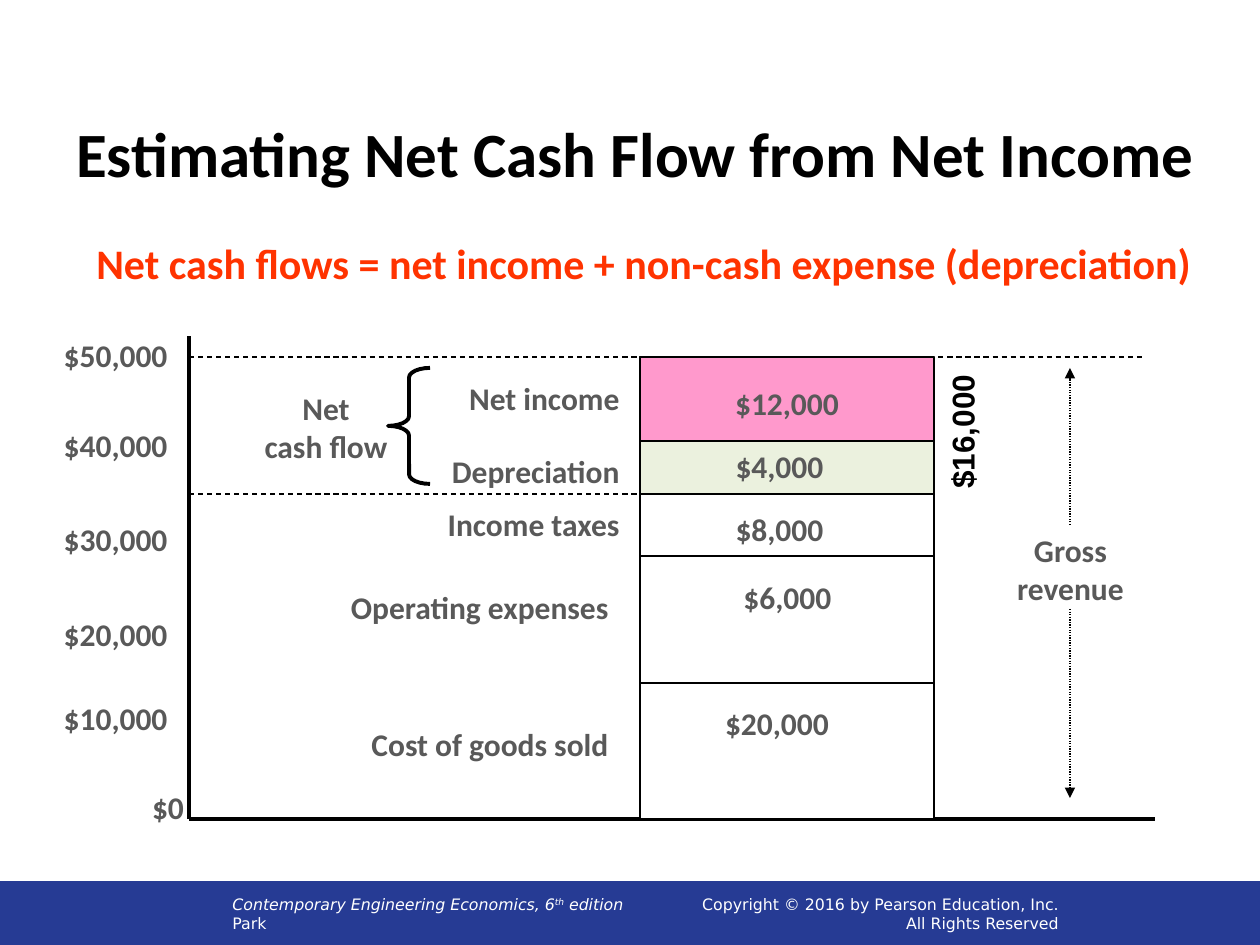
import pptx
import pptx.dml.color
import pptx.enum.dml
import pptx.enum.shapes
import pptx.enum.text
import pptx.oxml.ns
import pptx.util
from dataclasses import dataclass
from lxml import etree

PX = pptx.util.Inches(1) / 126
SHAPE = pptx.enum.shapes.MSO_SHAPE
DASH = pptx.enum.dml.MSO_LINE
ANCHOR = pptx.enum.text.MSO_ANCHOR
ALIGN = {
    "l": pptx.enum.text.PP_ALIGN.LEFT,
    "c": pptx.enum.text.PP_ALIGN.CENTER,
    "r": pptx.enum.text.PP_ALIGN.RIGHT,
}


@dataclass(frozen=True)
class Theme:
    ink: str = "000000"
    paper: str = "FFFFFF"
    label: str = "595959"
    formula: str = "FF3300"
    footer: str = "263B94"
    income: str = "FF99CC"
    depreciation: str = "EBF1DE"
    font: str = "Calibri"
    side_font: str = "Arial"
    footer_font: str = "DejaVu Sans"
    title_size: int = 36
    formula_size: int = 24
    label_size: int = 18
    footer_size: int = 9
    thin: float = 0.75
    thick: float = 2.25


THEME = Theme()


def emu(*lengths):
    return [round(length * PX) for length in lengths]


def rgb(color):
    return pptx.dml.color.RGBColor.from_string(color)


def add_text(slide, text, box, size=THEME.label_size, color=THEME.label, font=THEME.font,
             bold=True, italic=False, align="c", anchor=ANCHOR.TOP, wrap=False, rotation=0):
    label = slide.shapes.add_textbox(*emu(*box))
    label.rotation = rotation
    frame = label.text_frame
    frame.word_wrap = wrap
    frame.vertical_anchor = anchor
    for index, line in enumerate(text.split("\n")):
        paragraph = frame.paragraphs[0] if index == 0 else frame.add_paragraph()
        paragraph.alignment = ALIGN[align]
        for part, words in enumerate(line.split("^")):
            run = paragraph.add_run()
            run.text = words
            run.font.size = pptx.util.Pt(size)
            run.font.name = font
            run.font.bold = bold
            run.font.italic = italic and index == 0
            run.font.color.rgb = rgb(color)
            if part % 2:
                run.font._element.set("baseline", "30000")


def add_block(slide, box, preset=SHAPE.RECTANGLE, fill=None, line=THEME.ink, weight=THEME.thin):
    block = slide.shapes.add_shape(preset, *emu(*box))
    block.shadow.inherit = False
    if fill:
        block.fill.solid()
        block.fill.fore_color.rgb = rgb(fill)
    else:
        block.fill.background()
    block.line.color.rgb = rgb(line)
    block.line.width = pptx.util.Pt(weight)
    return block


def add_line(slide, start, end, weight=THEME.thin, dash=None, arrow=False):
    rule = slide.shapes.add_connector(
        pptx.enum.shapes.MSO_CONNECTOR.STRAIGHT, *emu(*start, *end))
    rule.line.color.rgb = rgb(THEME.ink)
    rule.line.width = pptx.util.Pt(weight)
    if dash:
        rule.line.dash_style = dash
    if arrow:
        etree.SubElement(rule.line._get_or_add_ln(), pptx.oxml.ns.qn("a:tailEnd"), type="triangle")
    etree.SubElement(rule._element.spPr, pptx.oxml.ns.qn("a:effectLst"))


def add_footer(slide, left, top, width, height):
    add_block(slide, (left, top, width, height), fill=THEME.footer, line=THEME.footer)
    style = dict(size=THEME.footer_size, color=THEME.paper, font=THEME.footer_font,
                 bold=False, anchor=ANCHOR.MIDDLE, wrap=True)
    add_text(slide, "Contemporary Engineering Economics, 6^th^ edition\nPark",
             (left + 220, top, 776, height), italic=True, align="l", **style)
    add_text(slide, "Copyright © 2016 by Pearson Education, Inc.\nAll Rights Reserved",
             (left + 620, top, 451, height), align="r", **style)


def add_heading(slide, left, top, width, height):
    add_text(slide, "Estimating Net Cash Flow from Net Income", (left, top, width, 110),
             size=THEME.title_size, color=THEME.ink, anchor=ANCHOR.MIDDLE, wrap=True)
    add_text(slide, "Net cash flows = net income + non-cash expense (depreciation)",
             (left + 21, top + height - 63, 1137, 63),
             size=THEME.formula_size, color=THEME.formula, align="l")


def add_axes(slide, left, top, width, height):
    bottom = top + height
    add_line(slide, (left, bottom), (left + width, bottom), THEME.thick)
    add_line(slide, (left, bottom), (left, top), THEME.thick)
    add_line(slide, (left, top + 21), (left + 955, top + 21), dash=DASH.DASH)
    add_line(slide, (left, top + 158), (left + 451, top + 158), dash=DASH.DASH)
    ticks = {"$50,000": -6, "$40,000": 84, "$30,000": 178, "$20,000": 273, "$10,000": 357}
    for amount, offset in ticks.items():
        add_text(slide, amount, (left - 139, top + offset, 130, 50), align="r")
    add_text(slide, "$0", (left - 50, bottom - 37, 58, 50))


def add_stack(slide, left, top, width, height):
    add_block(slide, (left, top, width, height), fill=THEME.paper)
    for divider in (84, 137, 199, 326):
        add_line(slide, (left, top + divider), (left + width, top + divider))
    add_block(slide, (left, top + 84, width, 53), fill=THEME.depreciation)
    add_block(slide, (left, top, width, 84), fill=THEME.income)
    amounts = [("$12,000", 82, 21, 130), ("$4,000", 83, 84, 113), ("$8,000", 83, 147, 113),
               ("$6,000", 91, 215, 113), ("$20,000", 72, 341, 130)]
    for amount, x, y, span in amounts:
        add_text(slide, amount, (left + x, top + y, span, 50))
    add_text(slide, "$16,000", (left + 252, top + 49, 140, 50), color=THEME.ink,
             font=THEME.side_font, align="l", rotation=270)


def add_items(slide, left, top, width, height):
    right = left + width
    items = [("Net income", 178, 0, 16), ("Depreciation", 194, 0, 89),
             ("Income taxes", 198, 0, 142), ("Operating expenses", 285, 11, 225),
             ("Cost of goods sold", 264, 11, 362)]
    for item, span, indent, y in items:
        add_text(slide, item, (right - indent - span, top + y, span, 50), align="r")
    brace = add_block(slide, (left + 137, top + 11, 42, 116), SHAPE.LEFT_BRACE,
                      weight=THEME.thick)
    brace.adjustments[0] = 0.23
    add_text(slide, "Net\ncash flow", (left, top + 26, 150, 89))


def add_revenue(slide, left, top, width, height):
    middle = left + width // 2
    add_line(slide, (middle, top + 157), (middle, top), dash=DASH.ROUND_DOT, arrow=True)
    add_line(slide, (middle, top + 241), (middle, top + height), dash=DASH.ROUND_DOT, arrow=True)
    add_text(slide, "Gross\nrevenue", (left, top + 157, width, 89))


def main():
    deck = pptx.Presentation()
    deck.slide_width, deck.slide_height = emu(1260, 945)
    slide = deck.slides.add_slide(deck.slide_layouts[6])
    add_footer(slide, 0, 882, 1260, 63)
    add_heading(slide, 63, 97, 1144, 197)
    add_axes(slide, 189, 336, 966, 483)
    add_stack(slide, 640, 357, 294, 462)
    add_items(slide, 251, 357, 381, 462)
    add_revenue(slide, 1004, 368, 133, 430)
    deck.save("out.pptx")


if __name__ == "__main__":
    main()
